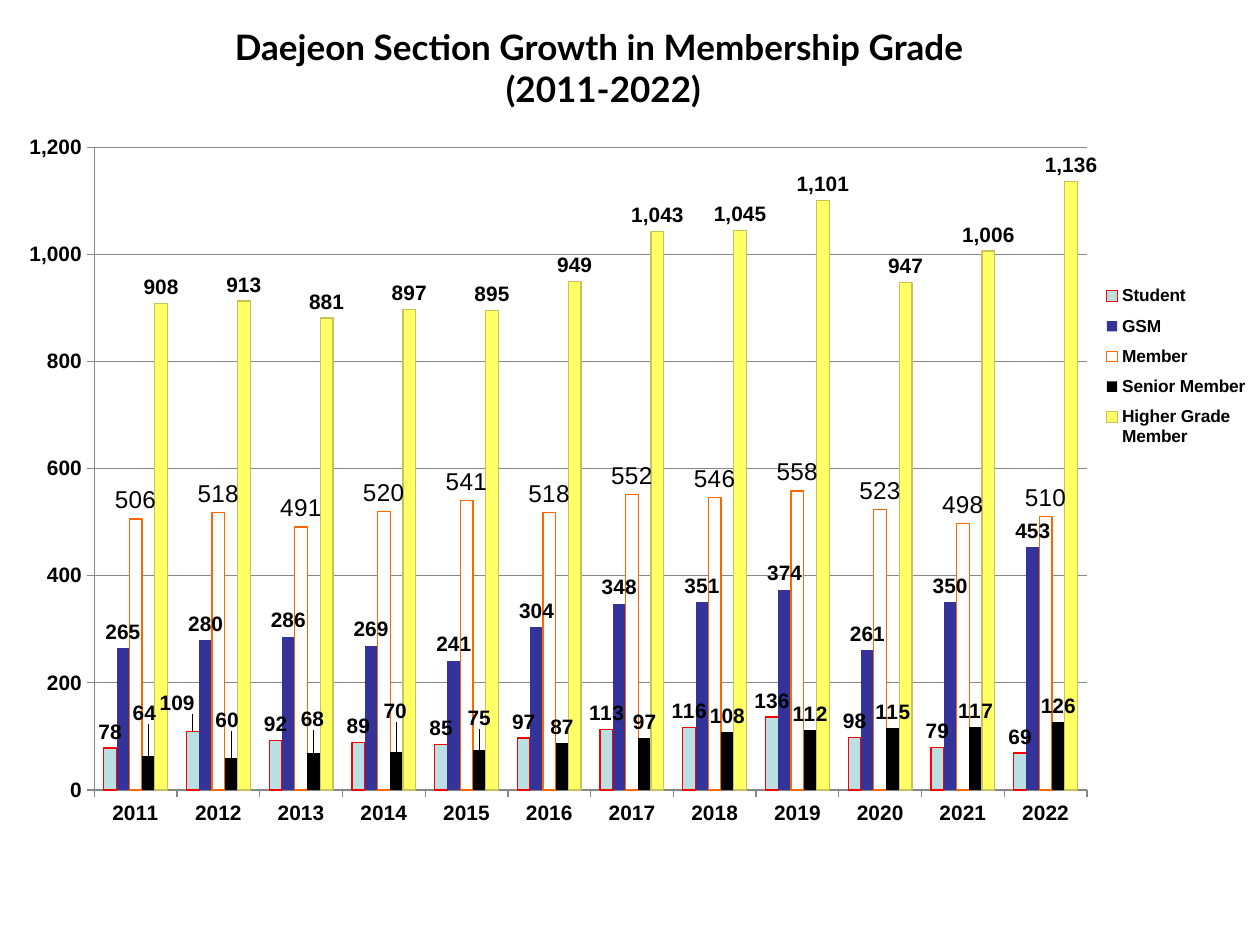
import pptx
import pptx.chart.data
import pptx.dml.color
import pptx.enum.chart
import pptx.enum.text
import pptx.oxml
import pptx.oxml.ns
import pptx.util
from pptx.util import Cm

COLORS = {
    "text": "000000",
    "axis": "868686",
    "student": "BBE0E3",
    "student_line": "FF0000",
    "gsm": "333399",
    "member": "FFFFFF",
    "member_line": "FF6600",
    "senior": "000000",
    "higher": "FFFF66",
    "higher_line": "C8C358",
}
YEARS = [str(year) for year in range(2011, 2023)]
# grade: (values, fill, outline, label size, label bold)
GRADES = {
    "Student": ([78, 109, 92, 89, 85, 97, 113, 116, 136, 98, 79, 69],
                "student", "student_line", 11.9, True),
    "GSM": ([265, 280, 286, 269, 241, 304, 348, 351, 374, 261, 350, 453],
            "gsm", None, 11.9, True),
    "Member": ([506, 518, 491, 520, 541, 518, 552, 546, 558, 523, 498, 510],
               "member", "member_line", 13.9, False),
    "Senior Member": ([64, 60, 68, 70, 75, 87, 97, 108, 112, 115, 117, 126],
                      "senior", None, 11.9, True),
    "Higher Grade Member": ([908, 913, 881, 897, 895, 949, 1043, 1045, 1101, 947, 1006, 1136],
                            "higher", "higher_line", 11.9, True),
}
# Labels moved from their usual place, as fractions of the chart: {point: (x, y)}
LABEL_SHIFTS = {
    "Student": {1: (-0.012, -0.015)},
    "Senior Member": {0: (-0.003, -0.033), 1: (-0.003, -0.027), 2: (-0.001, -0.023),
                      3: (-0.001, -0.032), 4: (0, -0.02)},
}
NUMBER_FORMAT = "#,##0"


def rgb(name):
    return pptx.dml.color.RGBColor.from_string(COLORS[name])


def style_font(font, size, bold=True, name="Arial"):
    font.name = name
    font.size = pptx.util.Pt(size)
    font.bold = bold
    font.color.rgb = rgb("text")


def manual_layout(**settings):
    """Return a c:layout element with the given children, in order."""
    children = "".join(f'<c:{tag} val="{value}"/>' for tag, value in settings.items())
    return pptx.oxml.parse_xml(
        f'<c:layout {pptx.oxml.ns.nsdecls("c")}><c:manualLayout>{children}'
        "</c:manualLayout></c:layout>")


def place(parent, index, **settings):
    """Give a chart part a manual layout in place of its own."""
    for old_layout in parent.findall(pptx.oxml.ns.qn("c:layout")):
        parent.remove(old_layout)
    parent.insert(index, manual_layout(**settings))


def add_title(slide):
    title = slide.shapes.add_textbox(Cm(1.27), Cm(0.43), Cm(21.79), Cm(1.85))
    frame = title.text_frame
    frame.word_wrap = True
    frame.vertical_anchor = pptx.enum.text.MSO_ANCHOR.MIDDLE
    heading = frame.paragraphs[0]
    heading.text = "Daejeon Section Growth in Membership Grade \v(2011-2022)"
    heading.alignment = pptx.enum.text.PP_ALIGN.CENTER
    for run in heading.runs:
        style_font(run.font, 20, name="Lato")


def style_axis(axis):
    style_font(axis.tick_labels.font, 11.9)
    axis.major_tick_mark = pptx.enum.chart.XL_TICK_MARK.OUTSIDE
    axis.minor_tick_mark = pptx.enum.chart.XL_TICK_MARK.NONE
    axis.format.line.color.rgb = rgb("axis")


def style_series(series, fill, outline, label_size, label_bold):
    series.format.fill.solid()
    series.format.fill.fore_color.rgb = rgb(fill)
    if outline:
        series.format.line.color.rgb = rgb(outline)
        series.format.line.width = pptx.util.Pt(0.75)
    else:
        series.format.line.fill.background()
    series.invert_if_negative = False

    outside = pptx.enum.chart.XL_LABEL_POSITION.OUTSIDE_END
    labels = series.data_labels
    labels.show_value = True
    labels.number_format = NUMBER_FORMAT
    labels.number_format_is_linked = False
    labels.position = outside
    style_font(labels.font, label_size, label_bold)

    shifts = LABEL_SHIFTS.get(series.name, {})
    for point, (x, y) in shifts.items():
        label = series.points[point].data_label
        label.position = outside
        style_font(label.font, label_size, label_bold)
    for element in labels._element.findall(pptx.oxml.ns.qn("c:dLbl")):
        x, y = shifts[element.idx_val if hasattr(element, "idx_val")
                      else int(element.find(pptx.oxml.ns.qn("c:idx")).get("val"))]
        place(element, 1, x=x, y=y)


def add_membership_chart(slide):
    data = pptx.chart.data.CategoryChartData(number_format=NUMBER_FORMAT)
    data.categories = YEARS
    for grade, (values, *_) in GRADES.items():
        data.add_series(grade, values)
    chart = slide.shapes.add_chart(
        pptx.enum.chart.XL_CHART_TYPE.COLUMN_CLUSTERED,
        Cm(-0.64), Cm(2.54), Cm(26.47), Cm(15.88), data).chart
    chart.has_title = False
    style_font(chart.font, 17.9, False)

    columns = chart.plots[0]
    columns.gap_width = 150
    columns.overlap = 0
    columns.vary_by_categories = False
    for series in columns.series:
        style_series(series, *GRADES[series.name][1:])

    members = chart.value_axis
    style_axis(chart.category_axis)
    style_axis(members)
    members.minimum_scale = 0
    members.maximum_scale = 1200
    members.major_unit = 200
    members.tick_labels.number_format = NUMBER_FORMAT
    members.tick_labels.number_format_is_linked = False
    members.has_major_gridlines = True
    members.major_gridlines.format.line.color.rgb = rgb("axis")

    chart.has_legend = True
    legend = chart.legend
    legend.position = pptx.enum.chart.XL_LEGEND_POSITION.RIGHT
    legend.include_in_layout = False
    style_font(legend.font, 9.9)
    place(legend._element, 1, xMode="edge", yMode="edge", x=0.86, y=0.19, w=0.12, h=0.23)
    plot_area = chart._chartSpace.chart.plotArea
    place(plot_area, 0, layoutTarget="inner", xMode="edge", yMode="edge",
          x=0.096, y=0.027, w=0.756, h=0.816)


def main():
    deck = pptx.Presentation()
    deck.slide_width = Cm(25.4)
    deck.slide_height = Cm(19.05)
    slide = deck.slides.add_slide(deck.slide_layouts[6])
    add_title(slide)
    add_membership_chart(slide)
    deck.save("out.pptx")


if __name__ == "__main__":
    main()
